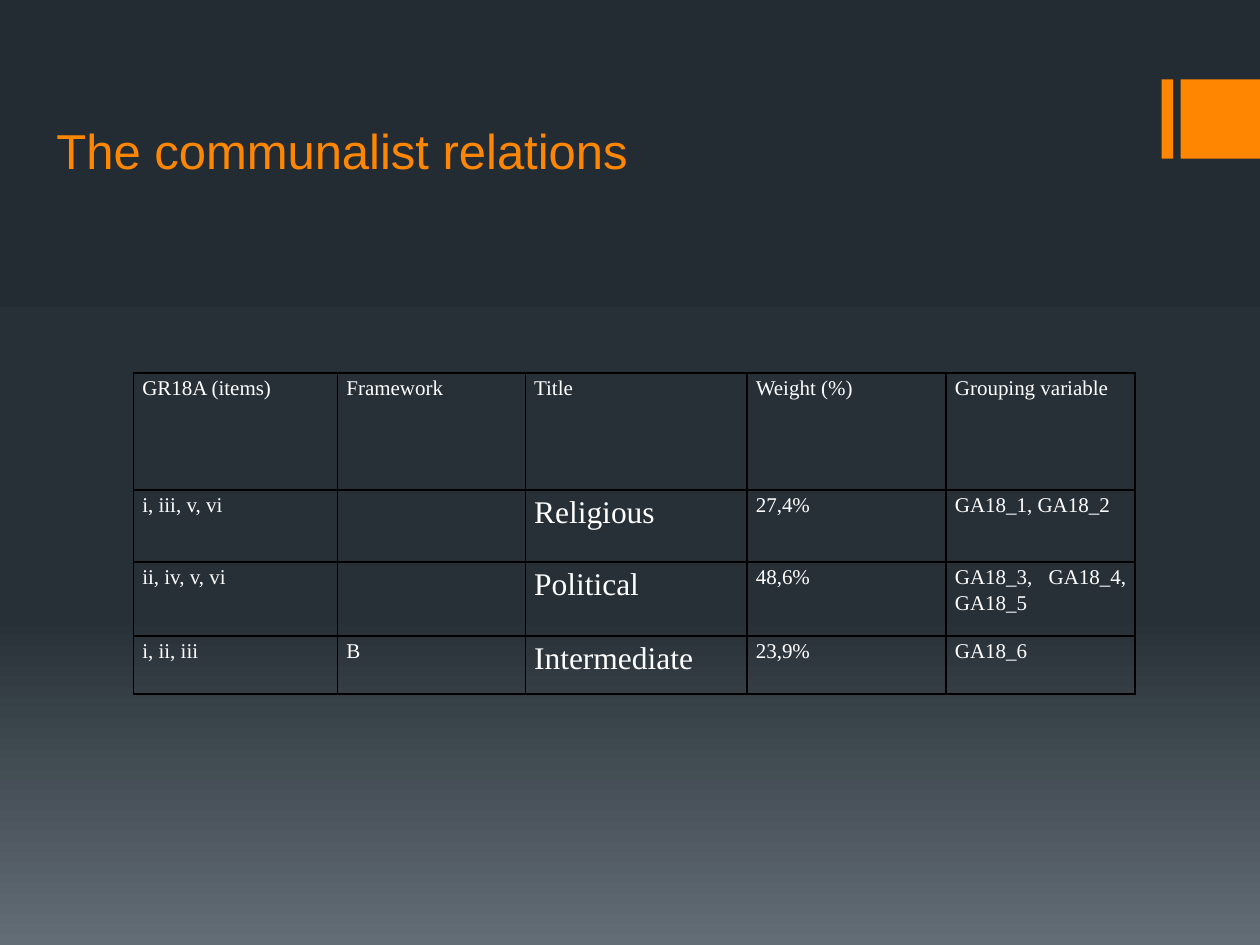
from copy import deepcopy
from dataclasses import dataclass

from lxml.etree import SubElement
from pptx import Presentation
from pptx.dml.color import RGBColor as RGB
from pptx.enum.shapes import MSO_SHAPE as Shape
from pptx.enum.text import MSO_ANCHOR as Anchor, PP_ALIGN as Align
from pptx.oxml.ns import qn
from pptx.util import Inches, Pt


@dataclass(frozen=True)
class Theme:
    accent: str = "FF8600"
    text: str = "FFFFFF"
    border: str = "000000"
    background: tuple = ((0, "242C33"), (0.65, "273037"), (1, "636D76"))
    title_font: str = "Arial"
    table_font: str = "Times New Roman"
    title_size: int = 28
    cell_size: int = 12
    factor_size: int = 18
    border_width: int = 1


THEME = Theme()

COLUMN_WIDTHS = (1.62, 1.49, 1.76, 1.58, 1.5)
ROW_HEIGHTS = (0.93, 0.57, 0.59, 0.46)
TITLE_COLUMN = 2
RELATIONS = (
    ("GR18Α (items)", "Framework", "Title", "Weight (%)", "Grouping variable"),
    ("i, iii, v, vi", "", "Religious", "27,4%", "GA18_1, GA18_2"),
    ("ii, iv, v, vi", "", "Political", "48,6%", "GA18_3, GA18_4, GA18_5"),
    ("i, ii, iii", "B", "Intermediate", "23,9%", "GA18_6"),
)


def paint_background(slide):
    fill = slide.background.fill
    fill.gradient()
    fill.gradient_angle = 270  # counter-clockwise, so top to bottom
    stop_list = next(slide.element.iter(qn("a:gsLst")))
    stop_list.append(deepcopy(stop_list[-1]))
    for stop, (position, color) in zip(fill.gradient_stops, THEME.background):
        stop.position = position
        stop.color.rgb = RGB.from_string(color)


def write_text(frame, text, *, font, size, color, align=Align.LEFT, spacing=None):
    frame.word_wrap = True
    paragraph = frame.paragraphs[0]
    paragraph.alignment = align
    paragraph.line_spacing = spacing
    run = paragraph.add_run()
    run.text = text
    run.font.name = font
    run.font.size = Pt(size)
    run.font.color.rgb = RGB.from_string(color)


def add_accent_block(slide, left, width):
    block = slide.shapes.add_shape(
        Shape.RECTANGLE, Inches(left), Inches(0.63), Inches(width), Inches(0.63))
    block.shadow.inherit = False
    block.fill.solid()
    block.fill.fore_color.rgb = RGB.from_string(THEME.accent)
    block.line.fill.background()


def add_title(slide, text):
    title = slide.shapes.add_textbox(
        Inches(0.35), Inches(0.6), Inches(8), Inches(0.87))
    title.text_frame.vertical_anchor = Anchor.BOTTOM
    write_text(title.text_frame, text, font=THEME.title_font,
               size=THEME.title_size, color=THEME.accent)


def format_cell(cell):
    cell.margin_left = cell.margin_right = Inches(0.07)
    cell.margin_top = cell.margin_bottom = 0
    properties = cell._tc.get_or_add_tcPr()
    for side in ("a:lnL", "a:lnR", "a:lnT", "a:lnB"):
        border = SubElement(properties, qn(side), w=str(Pt(THEME.border_width)))
        paint = SubElement(border, qn("a:solidFill"))
        SubElement(paint, qn("a:srgbClr"), val=THEME.border)
    cell.fill.background()


def add_relations_table(slide):
    table = slide.shapes.add_table(
        len(ROW_HEIGHTS), len(COLUMN_WIDTHS), Inches(1.06), Inches(2.96),
        Inches(sum(COLUMN_WIDTHS)), Inches(sum(ROW_HEIGHTS))).table
    table.first_row = table.horz_banding = False
    for column, width in zip(table.columns, COLUMN_WIDTHS):
        column.width = Inches(width)
    for row, height in zip(table.rows, ROW_HEIGHTS):
        row.height = Inches(height)

    for r, relation in enumerate(RELATIONS):
        for c, entry in enumerate(relation):
            cell = table.cell(r, c)
            format_cell(cell)
            if entry:
                is_factor = r > 0 and c == TITLE_COLUMN
                write_text(cell.text_frame, entry, font=THEME.table_font,
                           size=THEME.factor_size if is_factor else THEME.cell_size,
                           color=THEME.text, align=Align.JUSTIFY, spacing=1.15)


def main():
    deck = Presentation()
    deck.slide_width, deck.slide_height = Inches(10), Inches(7.5)
    slide = deck.slides.add_slide(deck.slide_layouts[6])

    # Backdrop and corner accent
    paint_background(slide)
    add_accent_block(slide, left=9.22, width=0.09)
    add_accent_block(slide, left=9.37, width=0.63)

    # Content
    add_title(slide, "The communalist relations")
    add_relations_table(slide)

    deck.save("out.pptx")


if __name__ == "__main__":
    main()
